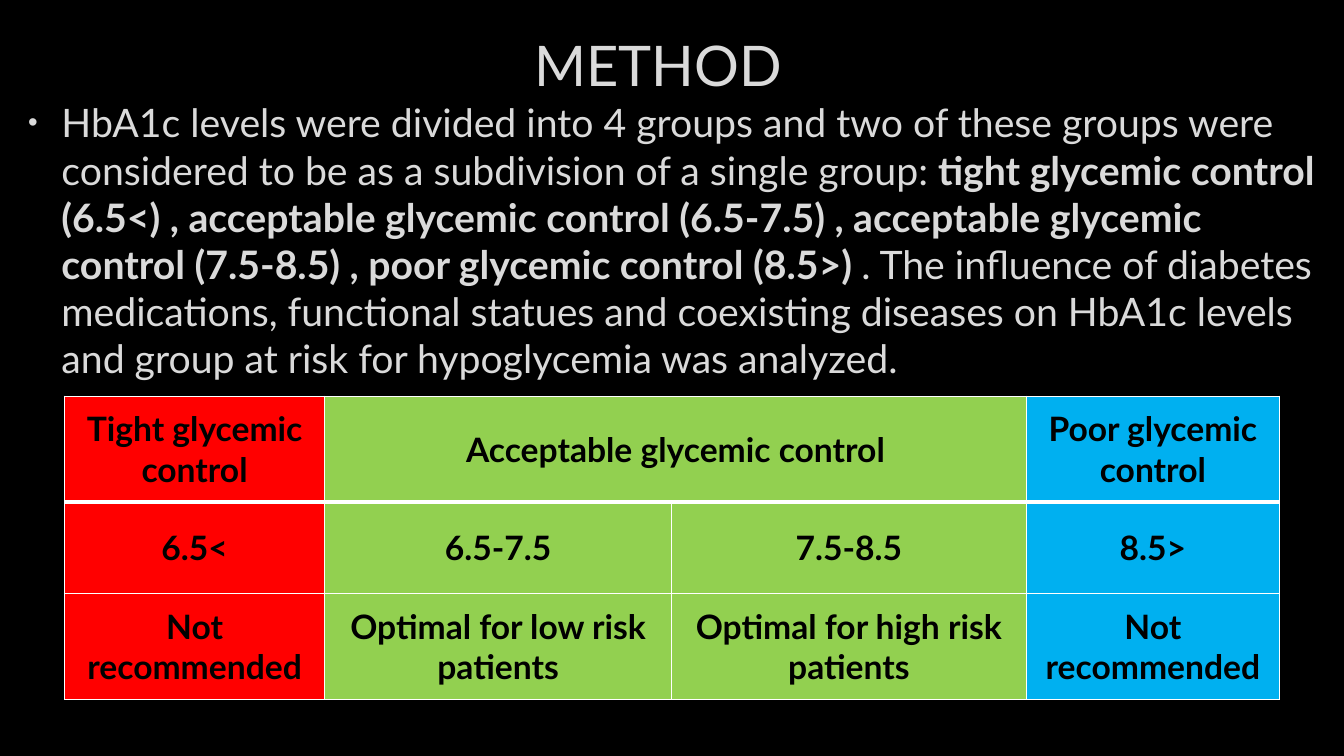
import dataclasses

import pptx
import pptx.dml.color
import pptx.enum.text
import pptx.oxml
import pptx.oxml.ns
import pptx.util

Inches = pptx.util.Inches
Pt = pptx.util.Pt
Align = pptx.enum.text.PP_ALIGN
Anchor = pptx.enum.text.MSO_ANCHOR


@dataclasses.dataclass(frozen=True)
class Theme:
    font: str = "Lato"
    back: str = "000000"
    light: str = "DADADA"
    dark: str = "000000"
    rule: str = "FFFFFF"
    tight: str = "FF0000"
    fair: str = "92D050"
    poor: str = "00B0F0"
    title: int = 40
    body: int = 28
    cell: int = 24


THEME = Theme()

BODY = [
    ("HbA1c levels were divided into 4 groups and two of these groups were "
     "considered to be as a subdivision of a single group: ", False),
    ("tight glycemic control (6.5<) , acceptable glycemic control (6.5-7.5) , "
     "acceptable glycemic control (7.5-8.5) , poor glycemic control (8.5>) ", True),
    (". The influence of diabetes medications, functional statues and coexisting "
     "diseases on HbA1c levels and group at risk for hypoglycemia was analyzed.", False),
]

GROUPS = [
    ["Tight glycemic control", "Acceptable glycemic control", "", "Poor glycemic control"],
    ["6.5<", "6.5-7.5", "7.5-8.5", "8.5>"],
    ["Not recommended", "Optimal for low risk patients",
     "Optimal for high risk patients", "Not recommended"],
]
FILLS = [THEME.tight, THEME.fair, THEME.fair, THEME.poor]
WIDTHS = [2.58, 3.44, 3.52, 2.51]
HEIGHTS = [1.05, 0.91, 1.05]


def rgb(code):
    return pptx.dml.color.RGBColor.from_string(code)


def add_xml(parent, text):
    ns = pptx.oxml.ns.nsdecls("a")
    parent.append(pptx.oxml.parse_xml(text.replace("/>", f" {ns}/>", 1)
                                      if text.endswith("/>") and text.count("<") == 1
                                      else text.replace(">", f" {ns}>", 1)))


def add_run(para, text, size, color, bold=False):
    run = para.add_run()
    run.text = text
    font = run.font
    font.name, font.size, font.bold = THEME.font, Pt(size), bold
    font.color.rgb = rgb(color)


def place(shape, left, top, width, height):
    shape.left, shape.top = Inches(left), Inches(top)
    shape.width, shape.height = Inches(width), Inches(height)
    shape.text_frame.auto_size = pptx.enum.text.MSO_AUTO_SIZE.NONE
    shape.text_frame.word_wrap = True


def set_title(shape):
    place(shape, 0.87, 0.11, 11.32, 1.06)
    shape.text_frame.vertical_anchor = Anchor.MIDDLE
    para = shape.text_frame.paragraphs[0]
    para.alignment = Align.CENTER
    add_run(para, "METHOD", THEME.title, THEME.light)


def set_body(shape):
    place(shape, 0.13, 0.93, 13.08, 6.31)
    shape.text_frame.vertical_anchor = Anchor.TOP
    para = shape.text_frame.paragraphs[0]
    props = para._p.get_or_add_pPr()
    props.set("marL", str(Inches(0.38)))
    props.set("indent", str(Inches(-0.33)))
    add_xml(props, f'<a:buClr><a:srgbClr val="{THEME.light}"/></a:buClr>')
    add_xml(props, '<a:buSzPct val="70000"/>')
    add_xml(props, '<a:buChar char="•"/>')
    para.space_before, para.space_after = Pt(0), Pt(6)
    for text, bold in BODY:
        add_run(para, text, THEME.body, THEME.light, bold)


def set_edges(cell, row):
    """Rule all four sides, with a thick line under the header row."""
    heavy = {0: "B", 1: "T"}.get(row)
    for side in "LRTB":
        width = Pt(3 if side == heavy else 1)
        add_xml(cell._tc.get_or_add_tcPr(),
                f'<a:ln{side} w="{width}"><a:solidFill><a:srgbClr val="{THEME.rule}"/>'
                f'</a:solidFill></a:ln{side}>')


def add_groups(slide):
    frame = slide.shapes.add_table(
        len(HEIGHTS), len(WIDTHS), Inches(0.64), Inches(3.93),
        Inches(sum(WIDTHS)), Inches(sum(HEIGHTS)))
    table = frame.table
    for col, width in zip(table.columns, WIDTHS):
        col.width = Inches(width)
    for row, height in zip(table.rows, HEIGHTS):
        row.height = Inches(height)
    table.cell(0, 1).merge(table.cell(0, 2))
    for r, texts in enumerate(GROUPS):
        for c, text in enumerate(texts):
            cell = table.cell(r, c)
            set_edges(cell, r)
            cell.fill.solid()
            cell.fill.fore_color.rgb = rgb(FILLS[c])
            cell.vertical_anchor = Anchor.MIDDLE
            if text:
                para = cell.text_frame.paragraphs[0]
                para.alignment = Align.CENTER
                add_run(para, text, THEME.cell, THEME.dark, True)


def main():
    deck = pptx.Presentation()
    deck.slide_width, deck.slide_height = Inches(13.33), Inches(7.5)
    slide = deck.slides.add_slide(deck.slide_layouts[1])
    slide.background.fill.solid()
    slide.background.fill.fore_color.rgb = rgb(THEME.back)
    set_title(slide.shapes.title)
    set_body(slide.placeholders[1])
    add_groups(slide)
    deck.save("out.pptx")


if __name__ == "__main__":
    main()
